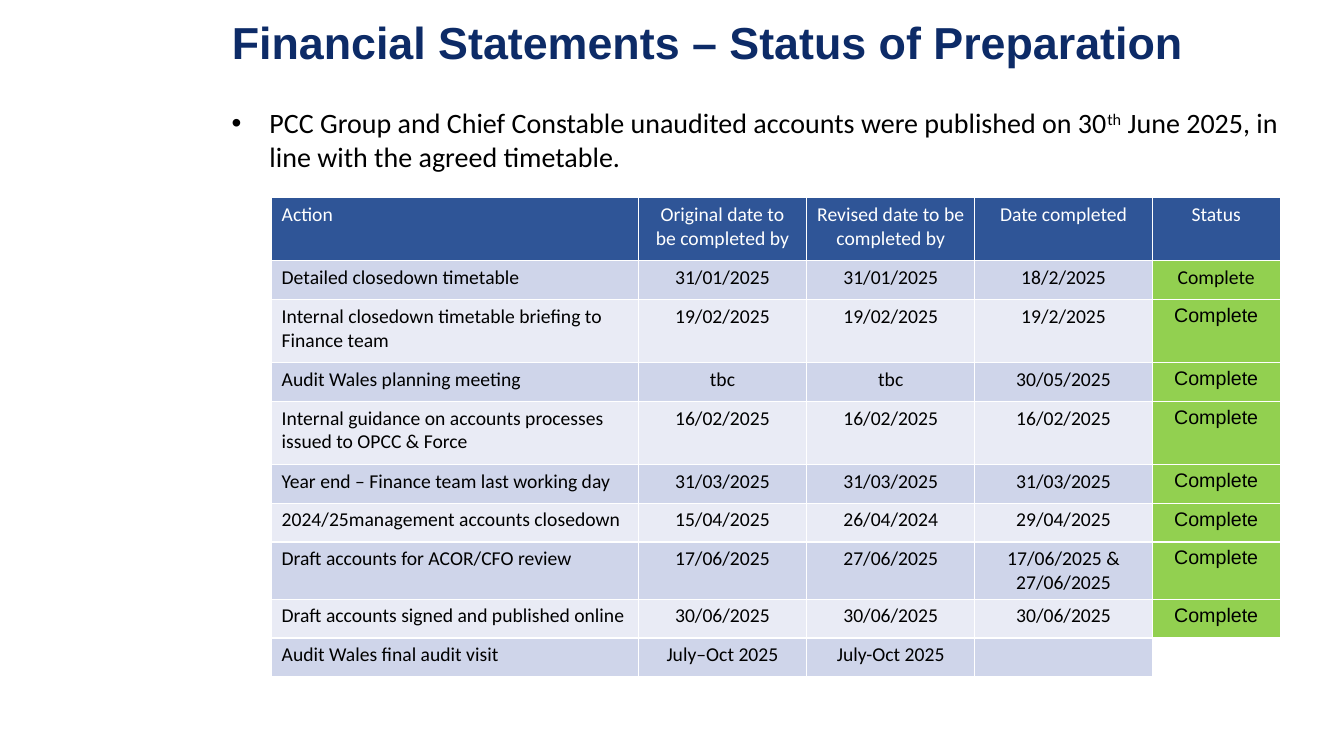
from dataclasses import dataclass

from lxml.etree import SubElement
from pptx import Presentation
from pptx.dml.color import RGBColor
from pptx.enum.text import MSO_ANCHOR, MSO_AUTO_SIZE, PP_ALIGN
from pptx.oxml.ns import qn
from pptx.util import Pt


@dataclass(frozen=True)
class Theme:
    navy: str = "0D2B67"
    blue: str = "2F5597"
    green: str = "92D050"
    dark: str = "CFD5EA"
    light: str = "E9EBF5"
    black: str = "000000"
    white: str = "FFFFFF"
    body: str = "Calibri"
    head: str = "Arial"
    title: int = 32
    lead: int = 20
    cell: int = 14


THEME = Theme()
DONE = "Complete"
HEADS = ["Action", "Original date to be completed by",
         "Revised date to be completed by", "Date completed", "Status"]
TASKS = [
    ["Detailed closedown timetable", "31/01/2025", "31/01/2025", "18/2/2025", DONE],
    ["Internal closedown timetable briefing to Finance team",
     "19/02/2025", "19/02/2025", "19/2/2025", DONE],
    ["Audit Wales planning meeting", "tbc", "tbc", "30/05/2025", DONE],
    ["Internal guidance on accounts processes issued to OPCC & Force",
     "16/02/2025", "16/02/2025", "16/02/2025", DONE],
    ["Year end – Finance team last working day",
     "31/03/2025", "31/03/2025", "31/03/2025", DONE],
    ["2024/25management accounts closedown",
     "15/04/2025", "26/04/2024", "29/04/2025", DONE],
    ["Draft accounts for ACOR/CFO review",
     "17/06/2025", "27/06/2025", "17/06/2025 & 27/06/2025", DONE],
    ["Draft accounts signed and published online",
     "30/06/2025", "30/06/2025", "30/06/2025", DONE],
    ["Audit Wales final audit visit", "July–Oct 2025", "July-Oct 2025", "", ""],
]
WIDTHS = [262, 120.2, 120.2, 126.7, 91.4]
TALL, SHORT = 45.1, 27.7
TALL_ROWS = {0, 2, 4}


def style(para, name, size, color, bold=False):
    font = para.font
    font.name, font.size, font.bold = name, Pt(size), bold
    font.color.rgb = RGBColor.from_string(color)


def add_title(slide, text):
    title = slide.shapes.title
    title.left, title.top = Pt(158.4), Pt(9.4)
    title.width, title.height = Pt(794), Pt(46)
    frame = title.text_frame
    frame.text = text
    frame.auto_size = MSO_AUTO_SIZE.NONE
    frame.vertical_anchor = MSO_ANCHOR.MIDDLE
    para = frame.paragraphs[0]
    para.alignment = PP_ALIGN.LEFT
    para.line_spacing = 0.9
    style(para, THEME.head, THEME.title, THEME.navy, True)


def add_lead(slide, parts):
    """Add a bulleted line; each part is its text and its raise in percent."""
    box = slide.shapes.add_textbox(Pt(158.4), Pt(72), Pt(794), Pt(85))
    frame = box.text_frame
    frame.word_wrap = True
    para = frame.paragraphs[0]
    props = para._p.get_or_add_pPr()
    props.set("marL", str(Pt(27)))
    props.set("indent", str(Pt(-27)))
    SubElement(props, qn("a:buFont")).set("typeface", THEME.head)
    SubElement(props, qn("a:buChar")).set("char", "•")
    style(para, THEME.body, THEME.lead, THEME.black)
    for text, lift in parts:
        run = para.add_run()
        run.text = text
        if lift:
            run.font._element.set("baseline", str(lift * 1000))


def fill_cell(cell, text, row, col):
    # Header, status and banded cells differ in colour
    status = col == len(HEADS) - 1
    if row == 0:
        fill = THEME.blue
    elif status:
        fill = THEME.green if text else None
    else:
        fill = THEME.dark if row % 2 else THEME.light
    if fill:
        cell.fill.solid()
        cell.fill.fore_color.rgb = RGBColor.from_string(fill)
    else:
        cell.fill.background()
    cell.text = text
    para = cell.text_frame.paragraphs[0]
    para.alignment = PP_ALIGN.CENTER if col else PP_ALIGN.LEFT
    name = THEME.head if status and row > 1 else THEME.body
    style(para, name, THEME.cell, THEME.black if row else THEME.white)


def add_grid(slide, rows):
    highs = [TALL if i in TALL_ROWS else SHORT for i in range(len(rows))]
    table = slide.shapes.add_table(
        len(rows), len(WIDTHS), Pt(194), Pt(141.1),
        Pt(sum(WIDTHS)), Pt(sum(highs))).table
    table.horz_banding = False
    for col, width in zip(table.columns, WIDTHS):
        col.width = Pt(width)
    for i, (row, high) in enumerate(zip(table.rows, highs)):
        row.height = Pt(high)
        for j, text in enumerate(rows[i]):
            fill_cell(table.cell(i, j), text, i, j)


def main():
    deck = Presentation()
    deck.slide_width, deck.slide_height = Pt(960), Pt(540)
    slide = deck.slides.add_slide(deck.slide_layouts[5])

    # Heading and lead sentence
    add_title(slide, "Financial Statements – Status of Preparation")
    add_lead(slide, [
        ("PCC Group and Chief Constable unaudited accounts were published on 30", 0),
        ("th", 30),
        (" June 2025, in line with the agreed timetable.", 0)])

    # Timetable
    add_grid(slide, [HEADS] + TASKS)
    deck.save("out.pptx")


if __name__ == "__main__":
    main()
